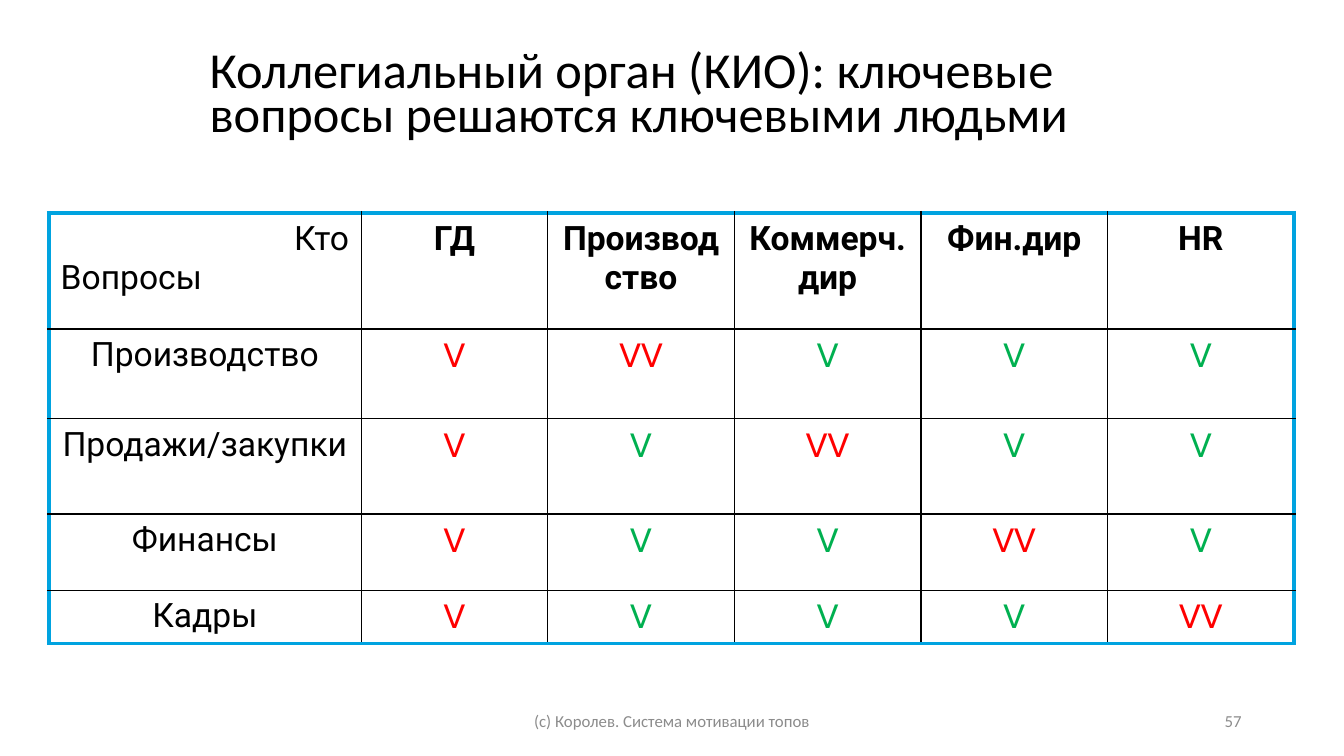
from dataclasses import dataclass

from lxml.etree import SubElement
from pptx import Presentation
from pptx.dml.color import RGBColor
from pptx.enum.text import MSO_ANCHOR as Anchor, MSO_AUTO_SIZE as AutoSize, PP_ALIGN as Align
from pptx.oxml.ns import qn
from pptx.util import Pt

# Content
TITLE = "Коллегиальный орган (КИО): ключевые вопросы решаются ключевыми людьми"
CORNER = ["Кто", "Вопросы"]
ROLES = ["ГД", "Производство", "Коммерч. дир", "Фин.дир", "HR"]
QUESTIONS = ["Производство", "Продажи/закупки", "Финансы", "Кадры"]
FOOTER = "(с) Королев. Система мотивации топов"
PAGE_NUMBER = "57"

# Geometry in points: left, top, width, height
SLIDE_SIZE = (960, 540)
TITLE_AREA = (142.5, 34.5, 671, 73.5)
FOOTER_AREA = (318, 500.5, 324, 28.75)
NUMBER_AREA = (678, 500.5, 216, 28.75)
TABLE_LEFT, TABLE_TOP = 34.75, 152
COLUMN_WIDTHS = [223.2] + [133.3] * len(ROLES)
ROW_HEIGHTS = [83, 64.2, 68, 54.6, 37]
CELL_MARGINS = (8.64, 4.32)


@dataclass(frozen=True)
class Theme:
    ink: str = "000000"
    frame: str = "00A3E0"
    lead: str = "FF0000"
    member: str = "00B050"
    muted: str = "8C8C8C"
    title_font: str = "Calibri"
    label_font: str = "Roboto"
    mark_font: str = "Cabin"
    title_size: int = 36
    table_size: int = 24
    footer_size: int = 12
    frame_width: float = 3
    grid_width: float = 1


theme = Theme()


def format_para(para, font, size, color, align, bold=False):
    para.alignment = align
    for span in para.runs:
        span.font.name = font
        span.font.size = Pt(size)
        span.font.bold = bold
        span.font.color.rgb = RGBColor.from_string(color)


def set_border(cell, side, color, width):
    line = SubElement(cell._tc.get_or_add_tcPr(), qn(f"a:ln{side}"), w=str(Pt(width)))
    fill = SubElement(line, qn("a:solidFill"))
    SubElement(fill, qn("a:srgbClr"), val=color)


def cell_content(row, column):
    """Return text lines, font, colour, alignments and weight of a cell."""
    if row == 0 and column == 0:
        return CORNER, theme.label_font, theme.ink, [Align.RIGHT, Align.LEFT], False
    if row == 0:
        return [ROLES[column - 1]], theme.label_font, theme.ink, [Align.CENTER], True
    if column == 0:
        return [QUESTIONS[row - 1]], theme.label_font, theme.ink, [Align.CENTER], False
    # The director of each area gets a double mark; the general director always leads
    owner = column == row + 1
    color = theme.lead if owner or column == 1 else theme.member
    return ["VV" if owner else "V"], theme.mark_font, color, [Align.CENTER], False


def add_footer_text(slide, area, text, align):
    box = slide.shapes.add_textbox(*map(Pt, area))
    frame = box.text_frame
    frame.word_wrap = True
    frame.vertical_anchor = Anchor.MIDDLE
    frame.text = text
    format_para(frame.paragraphs[0], theme.title_font, theme.footer_size, theme.muted, align)


def add_title(slide):
    title = slide.shapes.title
    title.left, title.top, title.width, title.height = map(Pt, TITLE_AREA)
    frame = title.text_frame
    frame.word_wrap = True
    frame.auto_size = AutoSize.NONE
    frame.vertical_anchor = Anchor.TOP
    frame.text = TITLE
    para = frame.paragraphs[0]
    para.line_spacing = Pt(32)
    format_para(para, theme.title_font, theme.title_size, theme.ink, Align.LEFT)


def add_matrix(slide):
    rows, columns = len(ROW_HEIGHTS), len(COLUMN_WIDTHS)
    table = slide.shapes.add_table(
        rows, columns, Pt(TABLE_LEFT), Pt(TABLE_TOP),
        Pt(sum(COLUMN_WIDTHS)), Pt(sum(ROW_HEIGHTS))).table
    table.first_row = table.horz_banding = False
    for column, width in zip(table.columns, COLUMN_WIDTHS):
        column.width = Pt(width)
    for row, height in zip(table.rows, ROW_HEIGHTS):
        row.height = Pt(height)

    for r in range(rows):
        for c in range(columns):
            cell = table.cell(r, c)
            cell.margin_left = cell.margin_right = Pt(CELL_MARGINS[0])
            cell.margin_top = cell.margin_bottom = Pt(CELL_MARGINS[1])
            lines, font, color, aligns, bold = cell_content(r, c)
            cell.text_frame.text = "\n".join(lines)
            for para, align in zip(cell.text_frame.paragraphs, aligns):
                format_para(para, font, theme.table_size, color, align, bold)
            # Thick blue outside, thin black inside
            outer_sides = {"L": c == 0, "R": c == columns - 1, "T": r == 0, "B": r == rows - 1}
            for side, outer in outer_sides.items():
                if outer:
                    set_border(cell, side, theme.frame, theme.frame_width)
                else:
                    set_border(cell, side, theme.ink, theme.grid_width)
            cell.fill.background()


def main():
    deck = Presentation()
    deck.slide_width, deck.slide_height = map(Pt, SLIDE_SIZE)
    slide = deck.slides.add_slide(deck.slide_layouts[5])
    add_matrix(slide)
    add_title(slide)
    add_footer_text(slide, FOOTER_AREA, FOOTER, Align.CENTER)
    add_footer_text(slide, NUMBER_AREA, PAGE_NUMBER, Align.RIGHT)
    deck.save("out.pptx")


if __name__ == "__main__":
    main()
